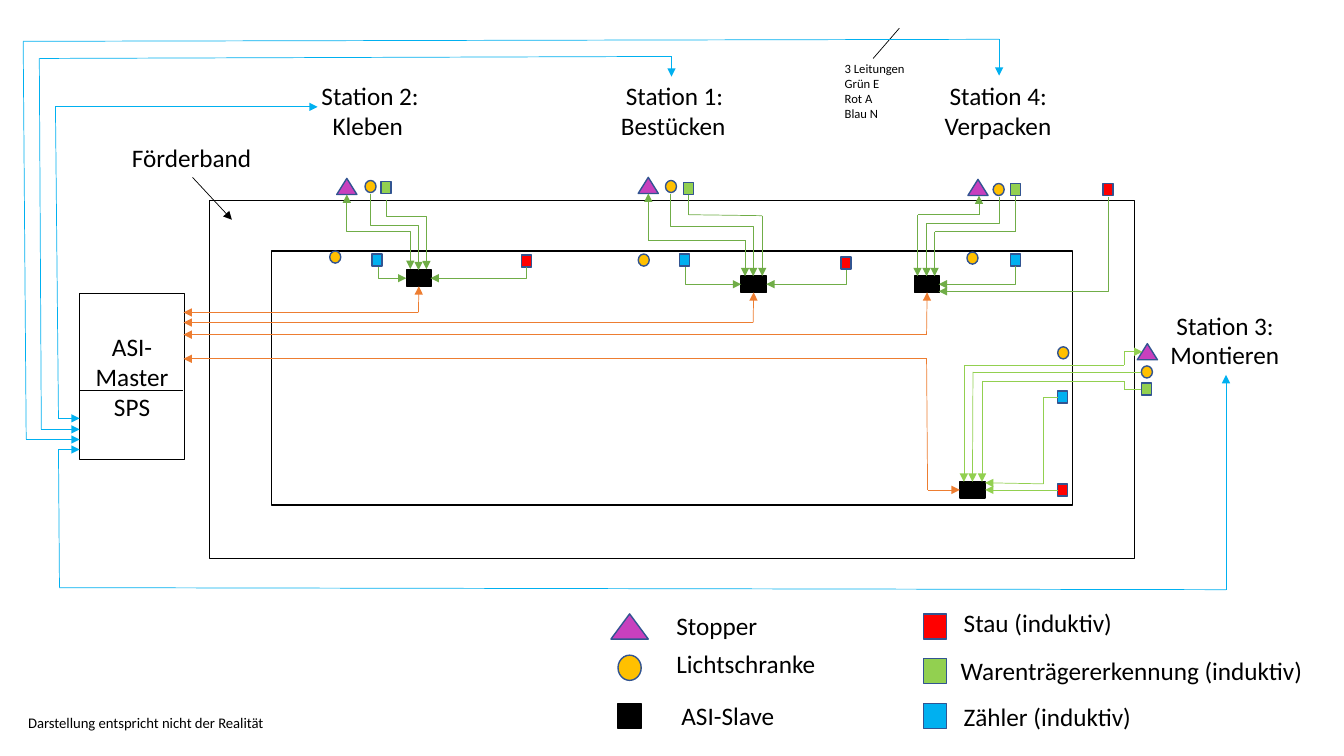
from collections import namedtuple

from lxml.etree import SubElement
from pptx import Presentation
from pptx.dml.color import RGBColor
from pptx.enum.shapes import MSO_CONNECTOR as Link, MSO_SHAPE as Shape
from pptx.enum.text import MSO_ANCHOR as Anchor, MSO_AUTO_SIZE as AutoSize, PP_ALIGN as Align
from pptx.oxml.ns import qn
from pptx.util import Cm, Pt

BLACK = RGBColor(0x00, 0x00, 0x00)
WHITE = RGBColor(0xFF, 0xFF, 0xFF)
NAVY = RGBColor(0x32, 0x54, 0x91)
PURPLE = RGBColor(0xC8, 0x40, 0xBE)
AMBER = RGBColor(0xFF, 0xC0, 0x00)
RED = RGBColor(0xFF, 0x00, 0x00)
LIME = RGBColor(0x92, 0xD0, 0x50)
SKY = RGBColor(0x00, 0xB0, 0xF0)
GREEN = RGBColor(0x70, 0xAD, 0x47)
ORANGE = RGBColor(0xED, 0x7D, 0x31)

Symbol = namedtuple("Symbol", "preset fill outline small large")
SQUARE = ((0.1, 0.12), (0.23, 0.25))
STOPPER = Symbol(Shape.ISOSCELES_TRIANGLE, PURPLE, NAVY, (0.2, 0.16), (0.37, 0.25))
LIGHT_BARRIER = Symbol(Shape.FLOWCHART_CONNECTOR, AMBER, NAVY, (0.11, 0.12), (0.23, 0.25))
JAM = Symbol(Shape.RECTANGLE, RED, NAVY, *SQUARE)
CARRIER = Symbol(Shape.RECTANGLE, LIME, NAVY, *SQUARE)
COUNTER = Symbol(Shape.RECTANGLE, SKY, NAVY, *SQUARE)
SLAVE = Symbol(Shape.RECTANGLE, BLACK, BLACK, (0.25, 0.16), (0.23, 0.25))

STATIONS = [
    ("Station 2:", (3.09, 0.75), "Kleben", (3.2, 1.05), 0.91),
    ("Station 1:", (6.11, 0.75), "Bestücken", (6.06, 1.05), 1.25),
    ("Station 4:", (9.32, 0.75), "Verpacken", (9.27, 1.05), 1.27),
    ("Station 3:", (11.57, 3.03), "Montieren", (11.51, 3.32), 1.29),
]
LEGEND = [
    (STOPPER, (6.06, 6.09), "Stopper", (6.61, 6.01), 1.01),
    (LIGHT_BARRIER, (6.13, 6.5), "Lichtschranke", (6.61, 6.38), 1.6),
    (SLAVE, (6.13, 6.98), "ASI-Slave", (6.66, 6.9), 1.13),
    (JAM, (9.16, 6.09), "Stau (induktiv)", (9.46, 5.98), 1.69),
    (CARRIER, (9.16, 6.53), "Warenträgererkennung (induktiv)", (9.43, 6.45), 3.63),
    (COUNTER, (9.16, 6.98), "Zähler (induktiv)", (9.46, 6.91), 1.88),
]
DEVICES = [
    (STOPPER, [(3.34, 1.77), (6.33, 1.76), (9.6, 1.78), (11.28, 3.41)]),
    (LIGHT_BARRIER, [(3.27, 2.49), (3.62, 1.79), (6.6, 1.79), (6.33, 2.52),
                     (9.59, 2.5), (9.85, 1.82), (11.32, 3.63), (10.49, 3.44)]),
    (COUNTER, [(3.69, 2.52), (6.74, 2.52), (10.02, 2.52), (10.49, 3.88)]),
    (JAM, [(5.17, 2.53), (8.34, 2.55), (10.94, 1.82), (10.49, 4.8)]),
    (CARRIER, [(3.78, 1.8), (6.78, 1.81), (10.02, 1.82), (11.32, 3.8)]),
    (SLAVE, [(4.03, 2.68), (7.35, 2.74), (9.07, 2.74), (9.52, 4.78)]),
]
ELBOWS = [
    ((3.44, 1.93), (4.07, 2.67), 0.5, True),
    ((3.67, 1.92), (4.15, 2.68), 0.42, False),
    ((3.83, 1.98), (4.23, 2.67), 0.24, False),
    ((6.65, 1.92), (7.47, 2.74), 0.4, False),
    ((9.91, 1.95), (9.19, 2.74), 0.34, False),
    ((3.75, 2.65), (4.03, 2.76), None, False),
    ((5.22, 2.65), (4.27, 2.76), None, False),
    ((6.8, 2.65), (7.35, 2.82), None, False),
    ((8.39, 2.68), (7.6, 2.82), None, False),
    ((10.07, 2.64), (9.31, 2.82), None, False),
    ((10.99, 1.95), (9.31, 2.89), None, False),
]
MASTER_ROUTES = [
    [(1.82, 3.1), (4.15, 3.1), (4.15, 2.84)],
    [(1.82, 3.2), (7.47, 3.2), (7.47, 2.9)],
    [(1.82, 3.32), (9.19, 3.32), (9.19, 2.9)],
    [(1.82, 3.56), (9.19, 3.56), (9.2, 4.86), (9.52, 4.86)],
]
STATION_ROUTES = [
    [(0.79, 4.15), (0.58, 4.15), (0.55, 1.06), (3.15, 1.06)],
    [(0.79, 4.26), (0.41, 4.26), (0.39, 0.58), (6.66, 0.56), (6.66, 0.76)],
    [(0.79, 4.36), (0.26, 4.36), (0.23, 0.41), (9.91, 0.39), (9.91, 0.75)],
    [(0.79, 4.46), (0.58, 4.46), (0.59, 5.83), (12.16, 5.85), (12.16, 3.72)],
]
DEVICE_ROUTES = [
    (GREEN, [(7.56, 2.74), (7.56, 2.14), (6.83, 2.13), (6.83, 1.94)], False),
    (GREEN, [(7.39, 2.74), (7.39, 2.38), (6.43, 2.38), (6.43, 1.92)], True),
    (GREEN, [(9.1, 2.74), (9.1, 2.13), (9.71, 2.13), (9.71, 1.94)], True),
    (GREEN, [(9.27, 2.74), (9.27, 2.3), (10.07, 2.3), (10.07, 1.95)], False),
    (LIME, [(9.77, 4.86), (10.49, 4.87)], False),
    (LIME, [(9.77, 4.79), (10.35, 4.8), (10.35, 3.94), (10.49, 3.94)], False),
    (LIME, [(9.56, 4.78), (9.56, 3.62), (11.15, 3.62), (11.15, 3.49), (11.33, 3.49)], True),
    (LIME, [(9.65, 4.78), (9.65, 3.69), (11.32, 3.69)], False),
    (LIME, [(9.74, 4.78), (9.74, 3.78), (11.15, 3.78), (11.15, 3.86), (11.32, 3.86)], False),
]


def inches(*values):
    return [Cm(value * 2.54) for value in values]


class Diagram:
    font = "Calibri"
    size = 18
    snap = 0.025

    def __init__(self, slide):
        self.slide = slide
        self.docks = []

    def add_lines(self, frame, lines, size, align=Align.LEFT):
        for index, line in enumerate(lines):
            paragraph = frame.add_paragraph() if index else frame.paragraphs[0]
            paragraph.alignment = align
            run = paragraph.add_run()
            run.text = line
            run.font.name = self.font
            run.font.size = Pt(size)
            run.font.color.rgb = BLACK

    def label(self, position, width, *lines, height=0.4, size=size):
        box = self.slide.shapes.add_textbox(*inches(*position, width, height))
        box.text_frame.word_wrap = False
        box.text_frame.auto_size = AutoSize.SHAPE_TO_FIT_TEXT
        self.add_lines(box.text_frame, lines, size)

    def box(self, position, extent, fill=WHITE, outline=BLACK, preset=Shape.RECTANGLE, lines=()):
        shape = self.slide.shapes.add_shape(preset, *inches(*position, *extent))
        shape.shadow.inherit = False
        shape.fill.solid()
        shape.fill.fore_color.rgb = fill
        shape.line.color.rgb = outline
        shape.line.width = Pt(1)
        shape.text_frame.vertical_anchor = Anchor.MIDDLE
        self.add_lines(shape.text_frame, lines, self.size, Align.CENTER)
        if preset == Shape.RECTANGLE:
            (x, y), (w, h) = position, extent
            sides = [(x + w / 2, y), (x, y + h / 2), (x + w / 2, y + h), (x + w, y + h / 2)]
            self.docks += [(shape, site, point) for site, point in enumerate(sides)]

    def symbol(self, kind, position, extent):
        self.box(position, extent, kind.fill, kind.outline, kind.preset)

    def style(self, connector, color, head, tail, width=0.5):
        connector.line.color.rgb = color
        connector.line.width = Pt(width)
        properties = connector.element.spPr
        for tag, wanted in (("a:headEnd", head), ("a:tailEnd", tail)):
            if wanted:
                SubElement(properties.find(qn("a:ln")), qn(tag)).set("type", "triangle")
        SubElement(properties, qn("a:effectLst"))

    def dock(self, connect, end):
        for shape, site, point in self.docks:
            if max(abs(point[0] - end[0]), abs(point[1] - end[1])) < self.snap:
                connect(shape, site)

    def route(self, color, points, head=False, tail=False, width=0.5):
        last = len(points) - 2
        for index, (start, end) in enumerate(zip(points, points[1:])):
            connector = self.slide.shapes.add_connector(Link.STRAIGHT, *inches(*start, *end))
            self.dock(connector.begin_connect, start)
            self.dock(connector.end_connect, end)
            self.style(connector, color, head and index == 0, tail and index == last, width)

    def elbow(self, color, start, end, bend=None, head=False):
        run, drop = abs(end[0] - start[0]), end[1] - start[1]
        left = (start[0] + end[0] - drop) / 2
        top = (start[1] + end[1] - run) / 2
        connector = self.slide.shapes.add_connector(
            Link.ELBOW, *inches(left, top, left + drop, top + run))
        transform = connector.element.spPr.find(qn("a:xfrm"))
        rightward = end[0] > start[0]
        transform.set("rot", str((270 if rightward else 90) * 60000))
        if rightward:
            transform.set("flipH", "1")
        geometry = connector.element.spPr.find(qn("a:prstGeom"))
        if bend is None:
            geometry.set("prst", "bentConnector2")
        else:
            guide = SubElement(geometry.find(qn("a:avLst")), qn("a:gd"))
            guide.set("name", "adj1")
            guide.set("fmla", f"val {round(bend * 100000)}")
        self.style(connector, color, head, True)


def main():
    presentation = Presentation()
    presentation.slide_width, presentation.slide_height = inches(13.33, 7.5)
    diagram = Diagram(presentation.slides.add_slide(presentation.slide_layouts[6]))

    diagram.box((2.08, 1.99), (9.17, 3.55))
    diagram.box((2.69, 2.49), (7.95, 2.52))
    diagram.box((0.79, 2.91), (1.04, 1.65), lines=("ASI-Master", "SPS"))
    diagram.route(BLACK, [(0.79, 3.87), (1.82, 3.87)], width=0.75)

    for title, title_position, task, task_position, width in STATIONS:
        diagram.label(title_position, 1.18, title)
        diagram.label(task_position, width, task)
    for kind, position, text, text_position, width in LEGEND:
        diagram.symbol(kind, position, kind.large)
        diagram.label(text_position, width, text)
    for kind, positions in DEVICES:
        for position in positions:
            diagram.symbol(kind, position, kind.small)

    diagram.label((1.21, 1.36), 1.4, "Förderband")
    diagram.route(BLACK, [(1.91, 1.76), (2.3, 2.18)], tail=True)
    diagram.label((8.28, 0.55), 0.8, "3 Leitungen", "Grün E", "Rot A", "Blau N", height=0.71, size=9)
    diagram.route(BLACK, [(8.66, 0.58), (8.92, 0.28)])
    diagram.label((0.18, 7.03), 2.59, "Darstellung entspricht nicht der Realität", height=0.28, size=10.5)

    for start, end, bend, head in ELBOWS:
        diagram.elbow(GREEN, start, end, bend, head)
    for color, points, tail in DEVICE_ROUTES:
        diagram.route(color, points, head=True, tail=tail)
    for color, routes in ((ORANGE, MASTER_ROUTES), (SKY, STATION_ROUTES)):
        for points in routes:
            diagram.route(color, points, head=True, tail=True)

    presentation.save("out.pptx")


if __name__ == "__main__":
    main()
